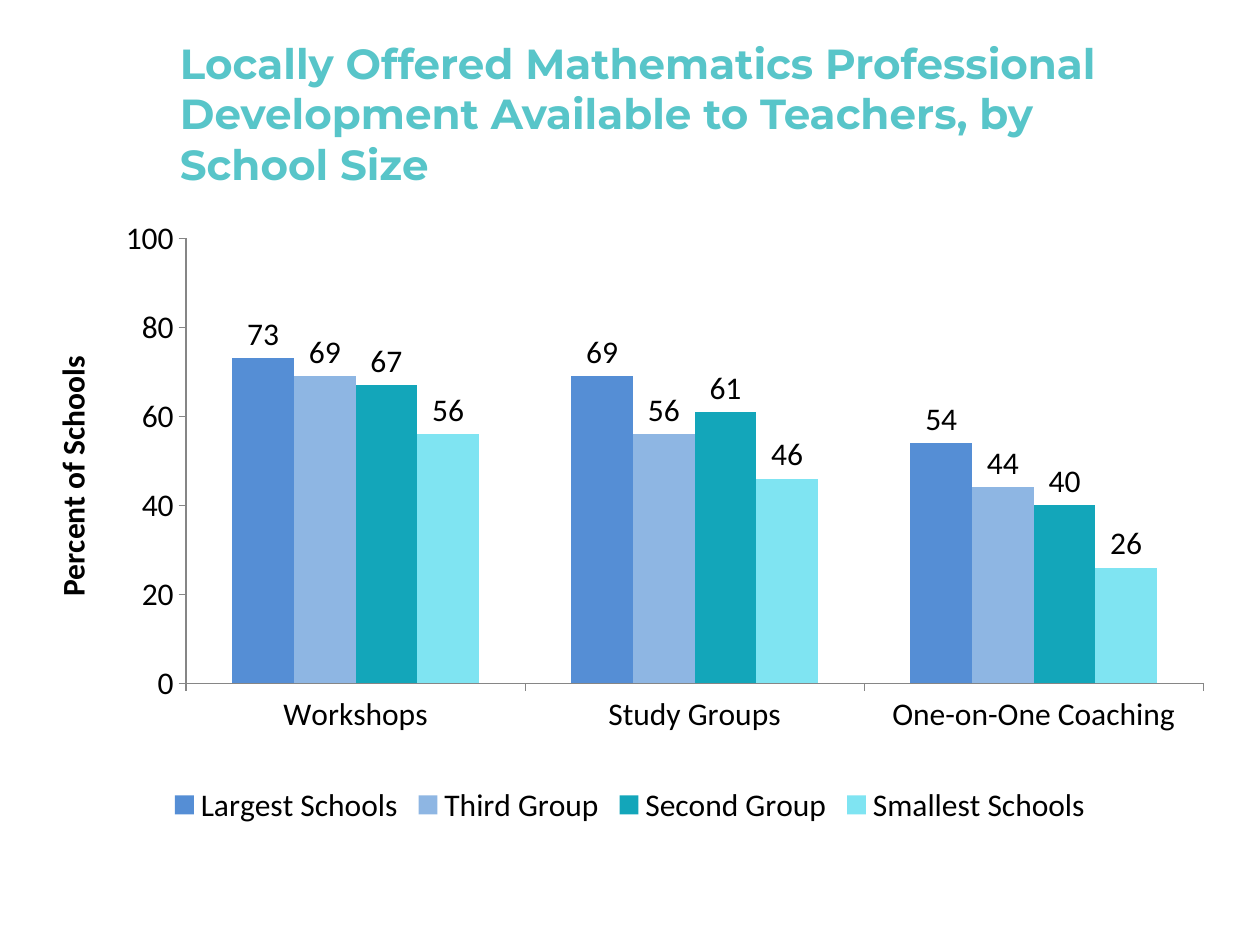
from lxml import etree
from pptx import Presentation
from pptx.chart.data import CategoryChartData
from pptx.dml.color import RGBColor
from pptx.enum.chart import XL_CHART_TYPE as CT, XL_LABEL_POSITION as LP
from pptx.enum.chart import XL_LEGEND_POSITION as LEG, XL_TICK_MARK as TM
from pptx.enum.text import MSO_ANCHOR
from pptx.oxml import parse_xml
from pptx.oxml.ns import nsdecls, qn
from pptx.util import Inches, Pt


def set_font(font, color, **values):
    for name, value in values.items():
        setattr(font, name, value)
    font.color.rgb = RGBColor.from_string(color)


prs = Presentation()
prs.slide_width, prs.slide_height = Inches(10), Inches(7.5)
s = prs.slides.add_slide(prs.slide_layouts[6])

# Title
title = s.shapes.add_textbox(Inches(1.33), Inches(0.42), Inches(8.17), Inches(0.95))
tf = title.text_frame
tf.word_wrap = True
tf.vertical_anchor = MSO_ANCHOR.MIDDLE
r = tf.paragraphs[0].add_run()
r.text = ("Locally Offered Mathematics Professional Development "
          "Available to Teachers, by School Size")
set_font(r.font, "58C5C9", name="Montserrat", size=Pt(24), bold=True)

# Chart
groups = [
    ("Largest Schools", (73, 69, 54), "558ED5"),
    ("Third Group", (69, 56, 44), "8EB6E3"),
    ("Second Group", (67, 61, 40), "13A6BA"),
    ("Smallest Schools", (56, 46, 26), "7FE4F2"),
]
data = CategoryChartData(number_format="0")
data.categories = ["Workshops", "Study Groups", "One-on-One Coaching"]
for name, percents, _ in groups:
    data.add_series(name, percents)
chart = s.shapes.add_chart(CT.COLUMN_CLUSTERED, Inches(0.29), Inches(1.67),
                           Inches(9.42), Inches(4.92), data).chart
text = {"name": "Calibri", "size": Pt(18)}
set_font(chart.font, "000000", **text)
chart.has_title = False
chart.has_legend = True
chart.legend.position = LEG.BOTTOM
chart.legend.include_in_layout = False

plot = chart.plots[0]
plot.vary_by_categories = False
plot.gap_width, plot.overlap = 150, 0
for series, (_, _, color) in zip(plot.series, groups):
    series.format.fill.solid()
    series.format.fill.fore_color.rgb = RGBColor.from_string(color)
    labels = series.data_labels
    labels.show_value = True
    labels.position = LP.OUTSIDE_END

# Axes
percent_axis = chart.value_axis
for name, value in {"minimum_scale": 0, "maximum_scale": 100, "major_unit": 20,
                    "has_major_gridlines": False}.items():
    setattr(percent_axis, name, value)
for axis in (chart.category_axis, percent_axis):
    axis.major_tick_mark, axis.minor_tick_mark = TM.OUTSIDE, TM.NONE
    axis.format.line.width = Pt(0.75)
    axis.format.line.color.rgb = RGBColor.from_string("868686")
p = percent_axis.axis_title.text_frame.paragraphs[0]
r = p.add_run()
r.text = "Percent of Schools"
set_font(r.font, "000000", bold=True, **text)

# Fixed inner plot area, as shares of the chart
plot_area = plot._element.getparent()
for old in plot_area.findall(qn("c:layout")):
    plot_area.remove(old)
layout = parse_xml(f'<c:layout {nsdecls("c")}><c:manualLayout/></c:layout>')
for tag, value in {"layoutTarget": "inner", "xMode": "edge", "yMode": "edge",
                   "x": 0.126, "y": 0.045, "w": 0.857, "h": 0.718}.items():
    etree.SubElement(layout[0], qn(f"c:{tag}")).set("val", str(value))
plot_area.insert(0, layout)

prs.save("out.pptx")
